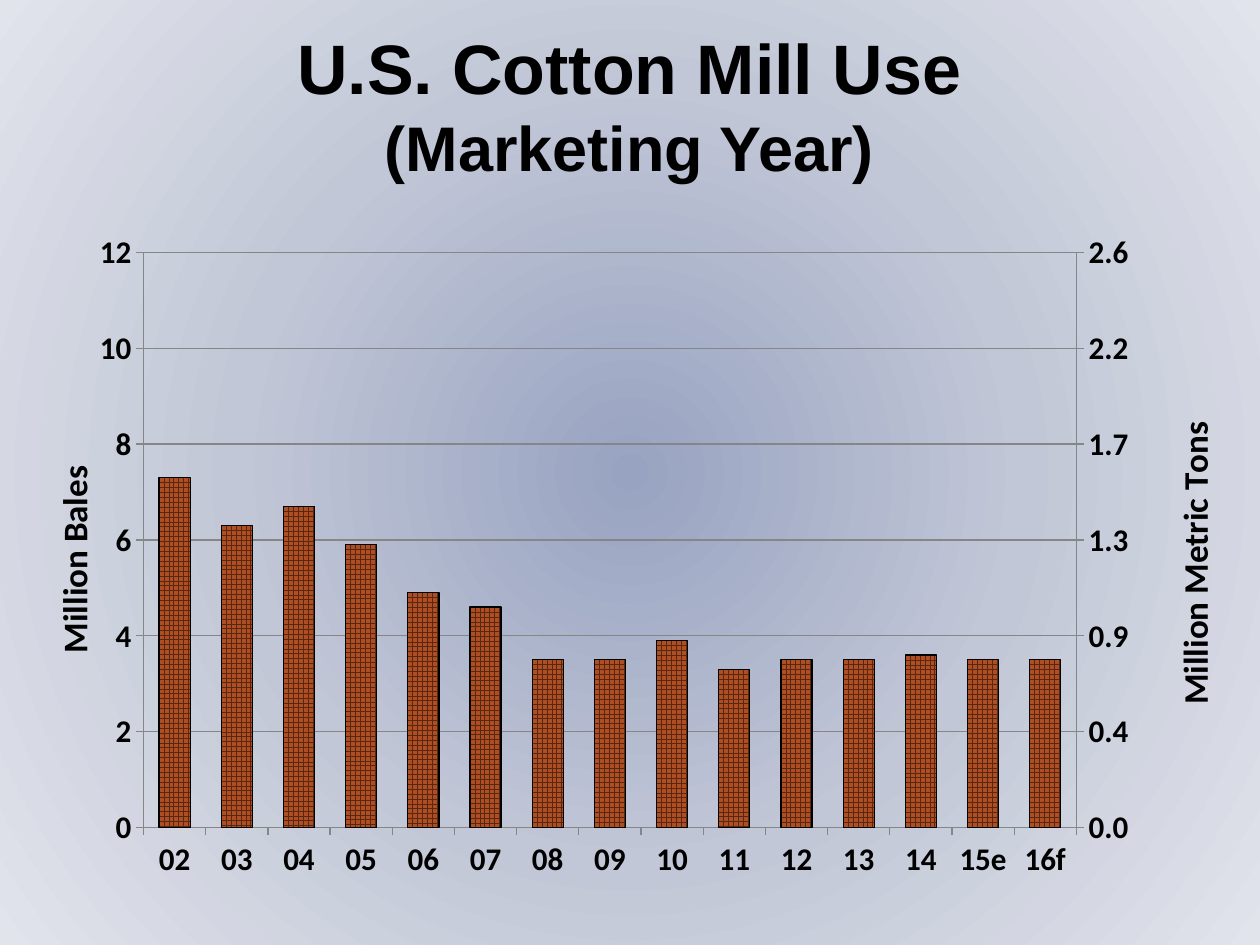
from copy import deepcopy

from pptx import Presentation
from pptx.chart.data import CategoryChartData
from pptx.dml.color import RGBColor
from pptx.enum.chart import XL_CHART_TYPE as CT, XL_TICK_LABEL_POSITION as TLP, XL_TICK_MARK as TM
from pptx.enum.dml import MSO_PATTERN as PAT
from pptx.enum.text import MSO_ANCHOR as ANCHOR, PP_ALIGN as ALIGN
from pptx.oxml import parse_xml
from pptx.oxml.ns import nsdecls, qn
from pptx.util import Inches, Pt

W, H = Inches(10), Inches(7.5)
BALES_PER_TON = 4.59
YEARS = ["02", "03", "04", "05", "06", "07", "08", "09", "10", "11", "12", "13", "14", "15e", "16f"]
BALES = [7.3, 6.3, 6.7, 5.9, 4.9, 4.6, 3.5, 3.5, 3.9, 3.3, 3.5, 3.5, 3.6, 3.5, 3.5]
TONS = [1.58, 1.37, 1.46, 1.28, 1.08, 1, 0.77, 0.77, 0.85, 0.72, 0.76, 0.77, 0.78, 0.75, 0.76]
STOPS = {0: "98A3C1", 50: "C2C7D7", 100: "E1E4EB"}
GREY = "868686"


def color(hex_text):
    return RGBColor.from_string(hex_text)


def set_attrs(obj, values):
    for name, value in values.items():
        setattr(obj, name, value)


def style_font(font, name, size):
    set_attrs(font, {"name": name, "size": Pt(size), "bold": True})
    font.color.rgb = color("000000")


def share_box(left, top, width, height):
    return [int(W * left), int(H * top), int(W * width), int(H * height)]


def add_background(slide):
    stops = "".join(
        f'<a:gs pos="{pos * 1000}"><a:srgbClr val="{rgb}"/></a:gs>' for pos, rgb in STOPS.items())
    slide.element.cSld.insert(0, parse_xml(
        f'<p:bg {nsdecls("p", "a")}><p:bgPr><a:gradFill rotWithShape="1"><a:gsLst>{stops}</a:gsLst>'
        '<a:path path="circle"><a:fillToRect l="50000" t="50000" r="50000" b="50000"/></a:path>'
        '</a:gradFill><a:effectLst/></p:bgPr></p:bg>'))


def add_title(slide, lines):
    sp = slide.shapes.add_textbox(*share_box(0.025, 0.044, 0.949, 0.133))
    tf = sp.text_frame
    set_attrs(tf, {"word_wrap": True, "vertical_anchor": ANCHOR.MIDDLE})
    for i, (text, size) in enumerate(lines):
        p = tf.paragraphs[0] if i == 0 else tf.add_paragraph()
        p.alignment = ALIGN.CENTER
        r = p.add_run()
        r.text = text
        style_font(r.font, "Arial", size)


def set_layout(parent, index, target="", **shares):
    for old in parent.findall(qn("c:layout")):
        parent.remove(old)
    inner = f'<c:layoutTarget val="{target}"/>' if target else ""
    sizes = "".join(f'<c:{key} val="{val}"/>' for key, val in shares.items())
    parent.insert(index, parse_xml(
        f'<c:layout {nsdecls("c")}><c:manualLayout>{inner}<c:xMode val="edge"/>'
        f'<c:yMode val="edge"/>{sizes}</c:manualLayout></c:layout>'))


def style_axis_title(axis, text, x, y):
    tf = axis.axis_title.text_frame
    tf.text = text
    style_font(tf.paragraphs[0].runs[0].font, "Calibri", 20)
    body = tf._txBody.find(qn("a:bodyPr"))
    set_layout(axis.axis_title._element, 1, x=x, y=y)
    for key, val in {"rot": "-5400000", "vert": "horz"}.items():
        body.set(key, val)


def style_axis(axis, **values):
    set_attrs(axis, {"major_tick_mark": TM.OUTSIDE, "minor_tick_mark": TM.NONE, **values})
    axis.format.line.color.rgb = color(GREY)


def style_scale(axis, top, step, fmt):
    style_axis(axis, minimum_scale=0, maximum_scale=top, major_unit=step)
    set_attrs(axis.tick_labels, {"number_format": fmt, "number_format_is_linked": False})


def add_right_axis(chart):
    area = chart.element.xpath(".//c:plotArea")[0]
    bars, cat, val = (area.find(qn(f"c:{tag}")) for tag in ("barChart", "catAx", "valAx"))
    bars2, cat2, val2 = map(deepcopy, (bars, cat, val))
    bars.remove(bars.findall(qn("c:ser"))[1])
    bars2.remove(bars2.findall(qn("c:ser"))[0])
    cat_id, val_id = "5001", "5002"
    for node, new_id in zip(bars2.findall(qn("c:axId")), (cat_id, val_id)):
        node.set("val", new_id)
    for axis, own, other in ((cat2, cat_id, val_id), (val2, val_id, cat_id)):
        axis.find(qn("c:axId")).set("val", own)
        axis.find(qn("c:crossAx")).set("val", other)
    cat2.find(qn("c:delete")).set("val", "1")
    val2.find(qn("c:axPos")).set("val", "r")
    val2.find(qn("c:crosses")).set("val", "max")
    bars.addnext(bars2)
    val.addnext(val2)
    val2.addnext(cat2)
    return type(chart.value_axis)(val2)


def add_mill_chart(slide):
    data = CategoryChartData()
    data.categories = YEARS
    data.add_series("Series 1", BALES)
    data.add_series("Series 2", TONS)
    chart = slide.shapes.add_chart(
        CT.COLUMN_STACKED, *share_box(0.025, 0.156, 0.949, 0.799), data).chart
    set_attrs(chart, {"has_legend": False, "has_title": False})
    style_font(chart.font, "Calibri", 18)
    plot = chart.plots[0]
    set_attrs(plot, {"gap_width": 100, "overlap": 100, "vary_by_categories": False})
    bales, tons = plot.series
    fill, line = bales.format.fill, bales.format.line
    fill.patterned()
    fill.pattern = PAT.LARGE_GRID
    fill.fore_color.rgb, fill.back_color.rgb = color("572711"), color("AE4E22")
    line.color.rgb, line.width = color("000000"), Pt(0.75)
    tons.format.fill.background()
    tons.format.line.fill.background()

    style_axis(chart.category_axis, tick_label_position=TLP.LOW)
    left = chart.value_axis
    left.has_major_gridlines = False
    right = add_right_axis(chart)
    left.has_major_gridlines = True
    left.major_gridlines.format.line.color.rgb = color(GREY)
    style_scale(left, 12, 2, "0")
    style_scale(right, 12 / BALES_PER_TON, 2 / BALES_PER_TON, "#,##0.0")
    style_axis_title(left, "Million Bales", 0.01, 0.41)
    style_axis_title(right, "Million Metric Tons", 0.96, 0.35)
    set_layout(chart.element.xpath(".//c:plotArea")[0], 0, "inner", x=0.095, y=0.139, w=0.791, h=0.762)


def main():
    prs = Presentation()
    set_attrs(prs, {"slide_width": W, "slide_height": H})
    slide = prs.slides.add_slide(prs.slide_layouts[6])
    add_background(slide)
    add_title(slide, [("U.S. Cotton Mill Use", 40), ("(Marketing Year)", 36)])
    add_mill_chart(slide)
    prs.save("out.pptx")


if __name__ == "__main__":
    main()
